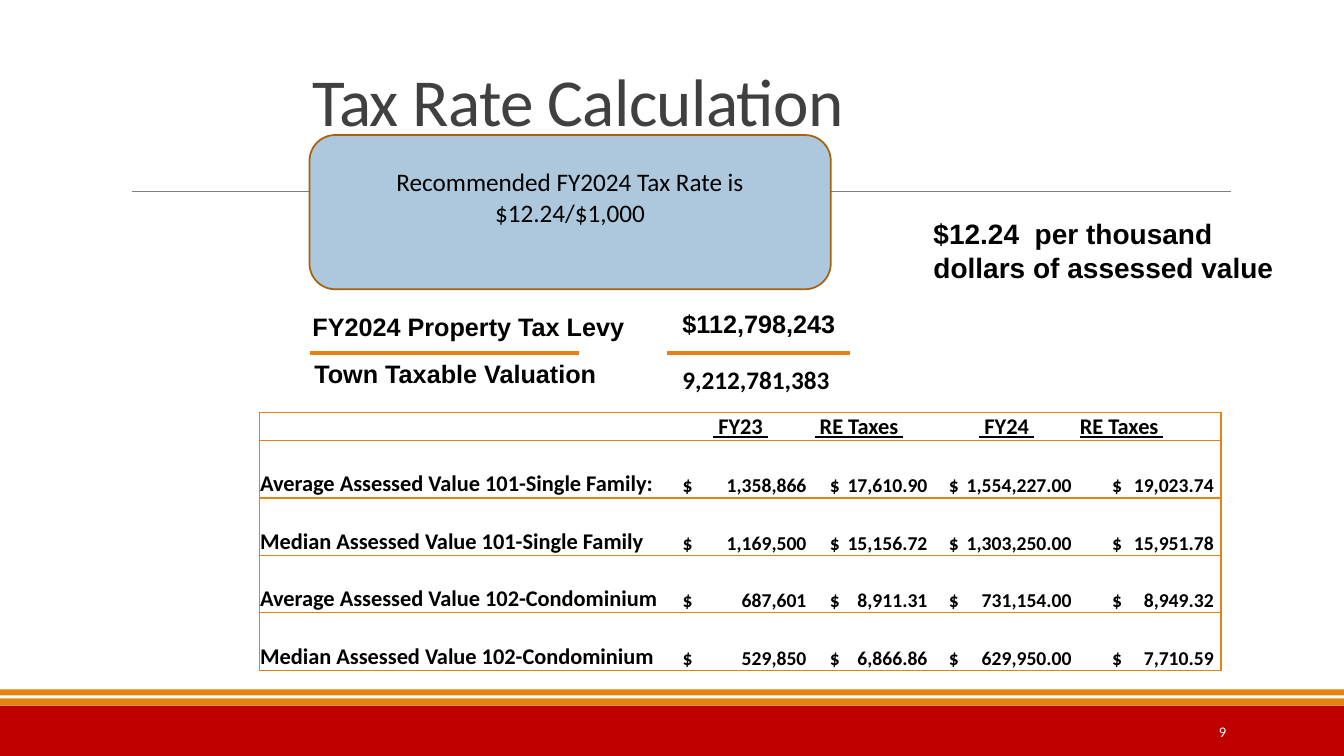
from lxml import etree
from pptx import Presentation
from pptx.dml.color import RGBColor
from pptx.enum.shapes import MSO_CONNECTOR as Link, MSO_SHAPE as Kind
from pptx.enum.text import MSO_ANCHOR as Anchor, PP_ALIGN as Align
from pptx.oxml.ns import qn
from pptx.util import Inches, Pt

# Content
TITLE = "Tax Rate Calculation"
ADVICE = "Recommended FY2024 Tax Rate is $12.24/$1,000"
RATE = "$12.24  per thousand dollars of assessed value"
HEADS = ["", " FY23 ", " RE Taxes ", " FY24 ", "RE Taxes "]
ROWS = [
    ("Average Assessed Value 101-Single Family:",
     "1,358,866", "17,610.90", "1,554,227.00", "19,023.74"),
    ("Median Assessed Value 101-Single Family",
     "1,169,500", "15,156.72", "1,303,250.00", "15,951.78"),
    ("Average Assessed Value 102-Condominium",
     "687,601", "8,911.31", "731,154.00", "8,949.32"),
    ("Median Assessed Value 102-Condominium",
     "529,850", "6,866.86", "629,950.00", "7,710.59"),
]
WIDTHS = [4.05, 1.45, 1.2, 1.43, 1.41]
SIGNS = [0, 0.14, 0.15, 0.13, 0.32]  # where each dollar sign starts
HEAD_H, ROW_H = 0.28, 0.57

RED = RGBColor(0xC0, 0x00, 0x00)
ORANGE = RGBColor(0xE4, 0x83, 0x12)
BROWN = RGBColor(0xA9, 0x61, 0x0D)
BLUE = RGBColor(0xAD, 0xC8, 0xDD)
GRAY = RGBColor(0x80, 0x80, 0x80)
DARK = RGBColor(0x40, 0x40, 0x40)
BLACK = RGBColor(0, 0, 0)
WHITE = RGBColor(0xFF, 0xFF, 0xFF)

deck = Presentation()
deck.slide_width, deck.slide_height = Inches(13.33), Inches(7.5)
slide = deck.slides.add_slide(deck.slide_layouts[6])
shapes = slide.shapes


def style(para, size, face="Calibri", color=BLACK, bold=False):
    for run in para.runs:
        font = run.font
        font.size, font.name, font.bold = Pt(size), face, bold
        font.color.rgb = color


def add_text(text, box, size, wrap=True, anchor=Anchor.TOP, **look):
    frame = shapes.add_textbox(*map(Inches, box)).text_frame
    frame.word_wrap, frame.vertical_anchor = wrap, anchor
    para = frame.paragraphs[0]
    para.text = text
    style(para, size, **look)
    return para


def add_box(kind, box, fill):
    shape = shapes.add_shape(kind, *map(Inches, box))
    shape.shadow.inherit = False
    shape.fill.solid()
    shape.fill.fore_color.rgb = fill
    shape.line.fill.background()
    return shape


def add_rule(left, right, y, color, width):
    ends = map(Inches, (left, y, right, y))
    rule = shapes.add_connector(Link.STRAIGHT, *ends)
    rule.line.color.rgb, rule.line.width = color, Pt(width)
    etree.SubElement(rule._element.spPr, qn("a:effectLst"))


def add_tabs(para, stops):
    tabs = etree.SubElement(para._p.get_or_add_pPr(), qn("a:tabLst"))
    for pos, side in stops:
        etree.SubElement(tabs, qn("a:tab"), pos=str(Inches(pos)), algn=side)


def set_edges(cell, shown):
    props = cell._tc.get_or_add_tcPr()
    for spot, side in enumerate("LRTB"):
        edge = etree.Element(qn("a:ln" + side), w=str(Pt(1)))
        if side in shown:
            fill = etree.SubElement(edge, qn("a:solidFill"))
            etree.SubElement(fill, qn("a:srgbClr"), val=str(ORANGE))
        else:
            etree.SubElement(edge, qn("a:noFill"))
        props.insert(spot, edge)


# Footer bands and title rule
add_box(Kind.RECTANGLE, (0, 7, 13.33, 0.5), RED)
add_box(Kind.RECTANGLE, (0, 6.93, 13.33, 0.07), ORANGE)
add_box(Kind.RECTANGLE, (0, 6.84, 13.33, 0.06), ORANGE)
add_rule(1.31, 12.21, 1.9, GRAY, 0.5)

# Title
title = add_text(TITLE, (3, 0.1, 6.32, 1.34), 48, anchor=Anchor.BOTTOM,
                 color=DARK)
title.line_spacing = 0.85
title.runs[0]._r.get_or_add_rPr().set("spc", "-50")

# Levy over valuation
bold = dict(face="Arial", bold=True)
add_text("FY2024 Property Tax Levy", (3, 3.04, 3.32, 0.4), 18, False, **bold)
add_text("Town Taxable Valuation", (3.02, 3.51, 3.03, 0.4), 18, False, **bold)
levy = add_text("$112,798,243", (6.67, 3.04, 1.83, 0.37), 18, **bold)
levy.line_spacing = 0.9
add_text("9,212,781,383", (6.67, 3.57, 1.71, 0.4), 18, bold=True)
for left, right in ((3.07, 5.74), (6.62, 8.43)):
    add_rule(left, right, 3.5, ORANGE, 3)
add_text(RATE, (9.16, 2.1, 3.59, 0.77), 20, **bold)

# Recommended rate
card = add_box(Kind.ROUNDED_RECTANGLE, (3.07, 1.34, 5.17, 1.53), BLUE)
card.line.color.rgb, card.line.width = BROWN, Pt(1.25)
frame = card.text_frame
frame.word_wrap, frame.vertical_anchor = True, Anchor.MIDDLE
frame.margin_bottom = Inches(0.35)
advice = frame.paragraphs[0]
advice.text, advice.alignment = ADVICE, Align.CENTER
style(advice, 18)

# Slide number
page = add_text("9", (10.83, 7.06, 1.43, 0.4), 10.5, anchor=Anchor.MIDDLE,
                color=WHITE)
page.alignment = Align.RIGHT

# Table of assessed values
high = HEAD_H + ROW_H * len(ROWS)
area = map(Inches, (2.57, 4.09, sum(WIDTHS), high))
table = shapes.add_table(len(ROWS) + 1, len(HEADS), *area).table
table.first_row = table.horz_banding = False
for col, width in zip(table.columns, WIDTHS):
    col.width = Inches(width)
for r, row in enumerate([HEADS] + ROWS):
    table.rows[r].height = Inches(ROW_H if r else HEAD_H)
    for c, text in enumerate(row):
        cell = table.cell(r, c)
        cell.margin_left = cell.margin_right = cell.margin_top = Inches(0.01)
        cell.margin_bottom = 0
        cell.vertical_anchor = Anchor.BOTTOM
        cell.fill.solid()
        cell.fill.fore_color.rgb = WHITE
        set_edges(cell, "TB" + {0: "L", len(HEADS) - 1: "R"}.get(c, ""))
        para = cell.text_frame.paragraphs[0]
        money = r > 0 and c > 0
        if money:
            add_tabs(para, [(SIGNS[c], "l"), (WIDTHS[c] - 0.08, "r")])
        para.text = f"\t$\t{text}" if money else text
        style(para, 14 if money else 16, bold=True)
        if r == 0:
            para.font.size = Pt(16)
            para.alignment = Align.CENTER if "FY" in text else Align.LEFT
            for run in para.runs:
                run.font.underline = True

deck.save("out.pptx")
